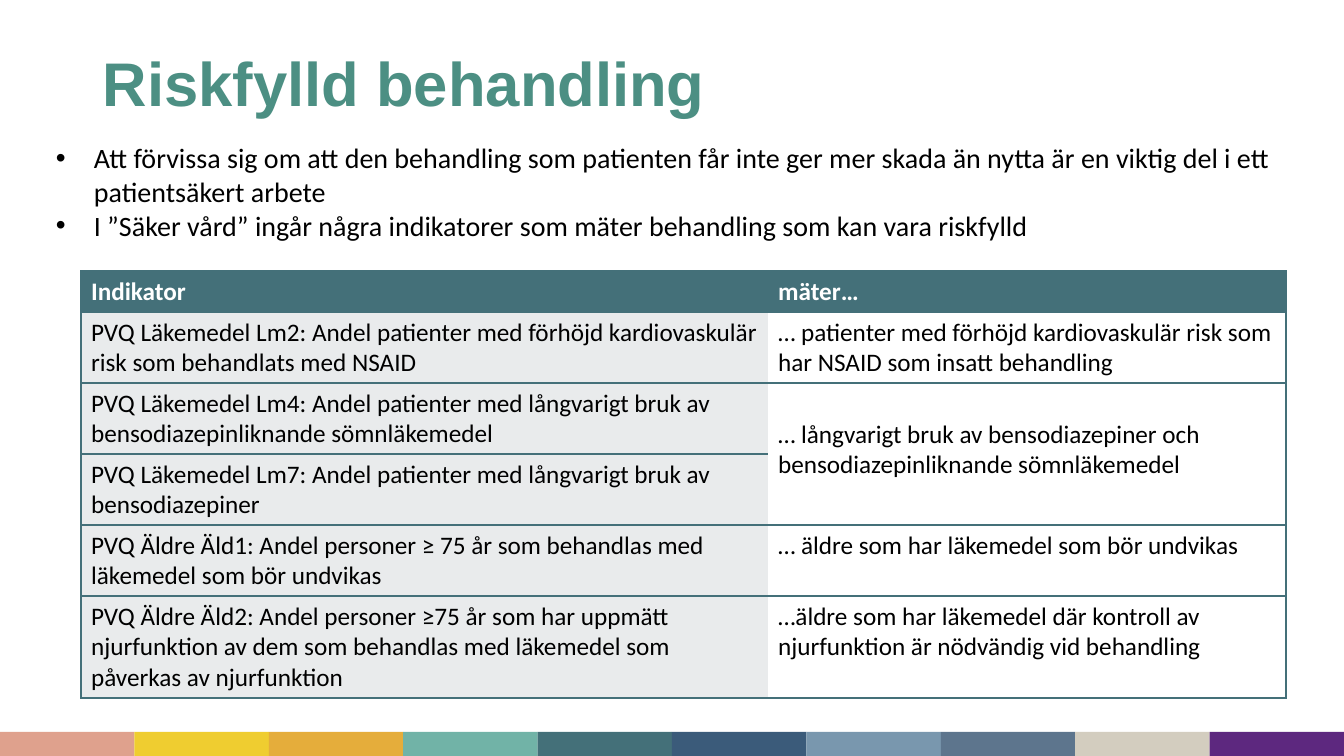
"""Build the slide on risky treatment with its table of indicators."""
from lxml.etree import SubElement
from pptx import Presentation
from pptx.dml.color import RGBColor
from pptx.enum.shapes import MSO_SHAPE as Shape
from pptx.enum.text import MSO_ANCHOR as Anchor
from pptx.oxml.ns import qn
from pptx.util import Emu, Pt

PX = 914400 / 100.8
TEAL = "447079"


def color(value):
    return RGBColor.from_string(value)


def write(para, text, size=18, font="Calibri", fill="000000", bold=False, bullet=False):
    if bullet:
        props = para._p.get_or_add_pPr()
        props.set("marL", str(round(38 * PX)))
        props.set("indent", str(round(-38 * PX)))
        SubElement(props, qn("a:buFont"), typeface="Arial")
        SubElement(props, qn("a:buChar"), char="•")
    span = para.add_run()
    span.text = text
    span.font.size = Pt(size)
    span.font.name = font
    span.font.bold = bold
    span.font.color.rgb = color(fill)


deck = Presentation()
deck.slide_width, deck.slide_height = Emu(round(1344 * PX)), Emu(round(756 * PX))
page = deck.slides.add_slide(deck.slide_layouts[6])

stripes = ["DFA18D", "EFCD30", "E5AD3B", "71B3A7", TEAL,
           "3B5B7A", "7997AE", "5D758D", "D3CDBF", "5D287F"]
stripe_width = deck.slide_width // len(stripes)
for index, fill in enumerate(stripes):
    stripe = page.shapes.add_shape(Shape.RECTANGLE, index * stripe_width, round(732 * PX),
                                   stripe_width, round(25 * PX))
    stripe.shadow.inherit = False
    stripe.fill.solid()
    stripe.fill.fore_color.rgb = color(fill)
    stripe.line.fill.background()

title = page.shapes.add_textbox(*[round(n * PX) for n in (93, 9, 1159, 146)]).text_frame
title.word_wrap = True
title.vertical_anchor = Anchor.MIDDLE
write(title.paragraphs[0], "Riskfylld behandling", size=44, font="Arial", fill="4C8F83", bold=True)

rows = [
    ("Indikator", "mäter…"),
    ("PVQ Läkemedel Lm2: Andel patienter med förhöjd kardiovaskulär risk som behandlats med NSAID",
     "… patienter med förhöjd kardiovaskulär risk som har NSAID som insatt behandling"),
    ("PVQ Läkemedel Lm4: Andel patienter med långvarigt bruk av bensodiazepinliknande sömnläkemedel",
     "… långvarigt bruk av bensodiazepiner och bensodiazepinliknande sömnläkemedel"),
    ("PVQ Läkemedel Lm7: Andel patienter med långvarigt bruk av bensodiazepiner", ""),
    ("PVQ Äldre Äld1: Andel personer ≥ 75 år som behandlas med läkemedel som bör undvikas",
     "… äldre som har läkemedel som bör undvikas"),
    ("PVQ Äldre Äld2: Andel personer ≥75 år som har uppmätt njurfunktion av dem som behandlas "
     "med läkemedel som påverkas av njurfunktion",
     "…äldre som har läkemedel där kontroll av njurfunktion är nödvändig vid behandling"),
]
heights = [41, 71, 71, 71, 71, 102]
frame = page.shapes.add_table(len(rows), 2, *[round(n * PX) for n in (81, 271, 1205, sum(heights))])
table = frame.table
table.horz_banding = False
for column, width in zip(table.columns, (687, 518)):
    column.width = round(width * PX)
for row, height in zip(table.rows, heights):
    row.height = round(height * PX)

for row_index, texts in enumerate(rows):
    header = row_index == 0
    for column_index, text in enumerate(texts):
        cell = table.cell(row_index, column_index)
        inner_side = "R" if column_index == 0 else "L"
        for side in "LRTB":
            line = SubElement(cell._tc.get_or_add_tcPr(), qn(f"a:ln{side}"), w=str(Pt(1)))
            if side == inner_side:
                SubElement(line, qn("a:noFill"))
            else:
                paint = SubElement(line, qn("a:solidFill"))
                SubElement(paint, qn("a:srgbClr"), val=TEAL)
        cell.fill.solid()
        cell.fill.fore_color.rgb = color(TEAL if header else ("E9EBEC", "FFFFFF")[column_index])
        if text:
            write(cell.text_frame.paragraphs[0], text,
                  fill="FFFFFF" if header else "000000", bold=header)

shared = table.cell(2, 1)
shared.merge(table.cell(3, 1))
shared.margin_top = round(36 * PX)

points = [
    "Att förvissa sig om att den behandling som patienten får inte ger mer skada än nytta "
    "är en viktig del i ett patientsäkert arbete",
    "I ”Säker vård” ingår några indikatorer som mäter behandling som kan vara riskfylld",
]
box = page.shapes.add_textbox(*[round(n * PX) for n in (46, 136, 1240, 146)]).text_frame
box.word_wrap = True
for index, point in enumerate(points):
    para = box.add_paragraph() if index else box.paragraphs[0]
    write(para, point, size=20, bullet=True)

deck.save("out.pptx")
